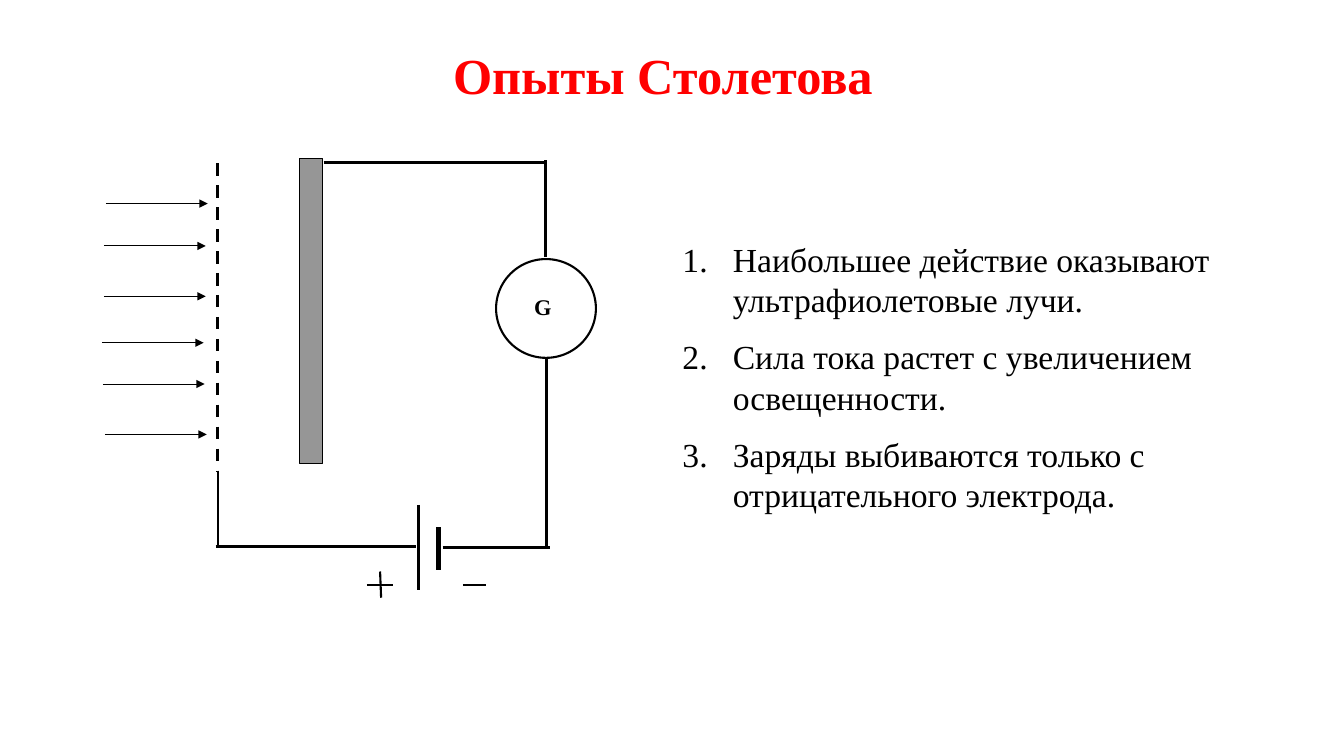
"""Build the slide on Stoletov's experiments: a photoelectric circuit and three findings."""
from dataclasses import dataclass

from pptx import Presentation
from pptx.dml.color import RGBColor
from pptx.enum.dml import MSO_LINE
from pptx.enum.shapes import MSO_CONNECTOR, MSO_SHAPE
from pptx.enum.text import MSO_ANCHOR, PP_ALIGN
from pptx.oxml.ns import qn
from pptx.shapes.autoshape import Shape
from pptx.slide import Slide
from pptx.util import Inches, Pt
from lxml import etree

STRAIGHT = MSO_CONNECTOR.STRAIGHT
RECTANGLE = MSO_SHAPE.RECTANGLE
OVAL = MSO_SHAPE.OVAL
DASH = MSO_LINE.DASH
MIDDLE = MSO_ANCHOR.MIDDLE
TOP = MSO_ANCHOR.TOP
CENTER = PP_ALIGN.CENTER
LEFT = PP_ALIGN.LEFT

COLORS = {"title": "FF0000", "ink": "000000", "plate": "969696", "meter": "FFFFFF"}
FONT = "Times New Roman"
RAY_LENGTH = 1.01


@dataclass(frozen=True)
class Wire:
    x1: float
    y1: float
    x2: float
    y2: float
    width: float = 2.25
    dashed: bool = False
    arrow: bool = False


@dataclass(frozen=True)
class Part:
    preset: MSO_SHAPE
    left: float
    top: float
    width: float
    height: float
    fill: str
    border: float


@dataclass(frozen=True)
class Caption:
    left: float
    top: float
    width: float
    height: float
    lines: tuple[str, ...]
    size: int
    color: str = "ink"
    bold: bool = False
    align: PP_ALIGN = LEFT
    anchor: MSO_ANCHOR = TOP
    wrap: bool = True
    numbered: bool = False


RAY_STARTS = [(1.05, 2.02), (1.03, 2.44), (1.03, 2.94), (1.01, 3.4), (1.02, 3.81), (1.04, 4.31)]
RAYS = [Wire(x, y, x + RAY_LENGTH, y, 0.75, arrow=True) for x, y in RAY_STARTS]
GRID = Wire(2.16, 1.62, 2.16, 4.67, dashed=True)
CIRCUIT = [
    Wire(2.16, 4.67, 2.16, 5.43, 1.5),
    Wire(2.14, 5.42, 4.13, 5.42),
    Wire(3.21, 1.61, 5.41, 1.61),
    Wire(4.39, 5.43, 5.45, 5.43),
    Wire(5.42, 5.42, 5.42, 3.54),
    Wire(5.41, 2.55, 5.41, 1.59),
]
BATTERY = [Wire(4.15, 5.01, 4.15, 5.85), Wire(4.35, 5.23, 4.35, 5.65, 3)]
POLARITY_SIGNS = [
    Wire(4.59, 5.8, 4.82, 5.8, 1.5),
    Wire(3.64, 5.8, 3.9, 5.8, 1.5),
    Wire(3.78, 5.93, 3.77, 5.67, 1.5),
]
PLATE = Part(RECTANGLE, 2.97, 1.57, 0.23, 3.03, "plate", 0.75)
GALVANOMETER = Part(OVAL, 4.92, 2.57, 0.99, 0.98, "meter", 1.5)

TITLE = Caption(3.94, 0.35, 5.27, 0.77, ("Опыты Столетова",), 36, "title", True, CENTER, MIDDLE)
METER_LETTER = Caption(5.2, 2.86, 0.37, 0.5, ("G",), 16, bold=True, wrap=False)
FINDINGS = Caption(6.67, 2.32, 5.88, 2.93, (
    "Наибольшее действие оказывают ультрафиолетовые лучи.",
    "Сила тока растет с увеличением освещенности.",
    "Заряды выбиваются только с отрицательного электрода.",
), 24, numbered=True)


def rgb(name: str) -> RGBColor:
    return RGBColor.from_string(COLORS[name])


def apply(target: object, values: dict[str, object]) -> None:
    for attribute, value in values.items():
        setattr(target, attribute, value)


def draw_wire(slide: Slide, wire: Wire) -> None:
    ends = (Inches(value) for value in (wire.x1, wire.y1, wire.x2, wire.y2))
    connector = slide.shapes.add_connector(STRAIGHT, *ends)
    connector.line.width = Pt(wire.width)
    connector.line.color.rgb = rgb("ink")
    if wire.dashed:
        connector.line.dash_style = DASH
    if wire.arrow:
        outline = connector.line._get_or_add_ln()
        etree.SubElement(outline, qn("a:tailEnd"), type="triangle")
    etree.SubElement(connector._element.spPr, qn("a:effectLst"))


def draw_part(slide: Slide, part: Part) -> Shape:
    box = (Inches(value) for value in (part.left, part.top, part.width, part.height))
    shape = slide.shapes.add_shape(part.preset, *box)
    shape.shadow.inherit = False
    shape.fill.solid()
    shape.fill.fore_color.rgb = rgb(part.fill)
    shape.line.color.rgb = rgb("ink")
    shape.line.width = Pt(part.border)
    return shape


def draw_caption(slide: Slide, caption: Caption) -> None:
    box = (Inches(value) for value in (caption.left, caption.top, caption.width, caption.height))
    frame = slide.shapes.add_textbox(*box).text_frame
    apply(frame, {"word_wrap": caption.wrap, "vertical_anchor": caption.anchor})
    frame.text = "\n".join(caption.lines)
    for index, paragraph in enumerate(frame.paragraphs):
        paragraph.alignment = caption.align
        apply(paragraph.runs[0].font, {"name": FONT, "size": Pt(caption.size), "bold": caption.bold})
        paragraph.runs[0].font.color.rgb = rgb(caption.color)
        if caption.numbered:
            paragraph.space_before = Pt(caption.size / 2 if index else 0)
            properties = paragraph._p.get_or_add_pPr()
            properties.set("marL", str(Inches(0.5)))
            properties.set("indent", str(-Inches(0.5)))
            etree.SubElement(properties, qn("a:buFont"), typeface=FONT)
            etree.SubElement(properties, qn("a:buAutoNum"), type="arabicPeriod")


def main() -> None:
    presentation = Presentation()
    apply(presentation, {"slide_width": Inches(13.33), "slide_height": Inches(7.5)})
    slide = presentation.slides.add_slide(presentation.slide_layouts[6])
    draw_caption(slide, TITLE)
    for part in (PLATE, GALVANOMETER):
        draw_part(slide, part)
    for wire in [GRID, *RAYS, *CIRCUIT, *BATTERY, *POLARITY_SIGNS]:
        draw_wire(slide, wire)
    for caption in (METER_LETTER, FINDINGS):
        draw_caption(slide, caption)
    presentation.save("out.pptx")


if __name__ == "__main__":
    main()
